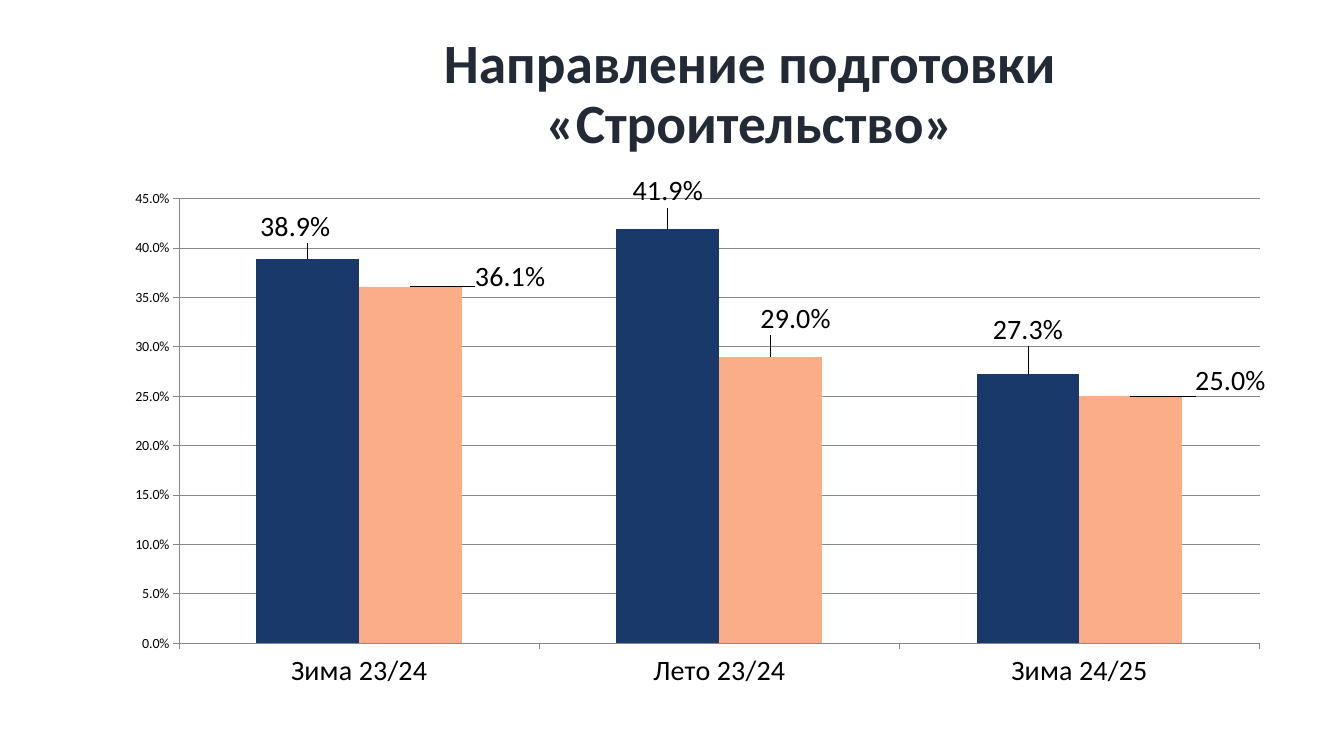
"""Build a slide with a clustered column chart for the «Строительство» programme."""
import pptx
import pptx.chart.data
import pptx.dml.color
import pptx.enum.chart
import pptx.enum.text
import pptx.oxml
import pptx.oxml.ns
import pptx.util

Cm = pptx.util.Cm
Pt = pptx.util.Pt
RGBColor = pptx.dml.color.RGBColor

TITLE_COLOR = RGBColor(0x22, 0x2A, 0x35)
TEXT_COLOR = RGBColor(0x00, 0x00, 0x00)
LINE_COLOR = RGBColor(0x88, 0x88, 0x88)
NAVY = RGBColor(0x1A, 0x39, 0x6B)
PEACH = RGBColor(0xFB, 0xAD, 0x87)
FONT_NAME = "Calibri"
PERCENT = "0.0%"

SERIES = [
    ("Series 1", NAVY, [0.389, 0.419, 0.273], [(-0.01, -0.02), (0, -0.03), (0, -0.04)]),
    ("Series 2", PEACH, [0.361, 0.29, 0.25], [(0.08, 0.02), (0.02, -0.03), (0.08, 0.01)]),
]


def format_font(font, size, color=TEXT_COLOR, bold=False):
    for name, value in {"name": FONT_NAME, "size": Pt(size), "bold": bold}.items():
        setattr(font, name, value)
    font.color.rgb = color


def manual_layout(settings):
    items = "".join(f'<c:{name} val="{value}"/>' for name, value in settings.items())
    return pptx.oxml.parse_xml(
        f'<c:layout {pptx.oxml.ns.nsdecls("c")}><c:manualLayout>{items}</c:manualLayout></c:layout>'
    )


presentation = pptx.Presentation()
presentation.slide_width = Cm(33.87)
presentation.slide_height = Cm(19.05)
slide = presentation.slides.add_slide(presentation.slide_layouts[6])

chart_data = pptx.chart.data.CategoryChartData(number_format=PERCENT)
chart_data.categories = ["Зима 23/24", "Лето 23/24", "Зима 24/25"]
for name, color, values, offsets in SERIES:
    chart_data.add_series(name, values)
chart = slide.shapes.add_chart(
    pptx.enum.chart.XL_CHART_TYPE.COLUMN_CLUSTERED,
    Cm(0.97), Cm(2.87), Cm(31.37), Cm(14.55), chart_data,
).chart
chart.has_legend = False
chart.has_title = False
format_font(chart.font, 10)

plot_area = chart.plots[0]
plot_area.gap_width = 150
plot_area.overlap = 0
plot_area.vary_by_categories = False
plot_element = chart._chartSpace.chart.plotArea
for layout in plot_element.xpath("c:layout"):
    plot_element.remove(layout)
plot_element.insert(0, manual_layout({
    "layoutTarget": "inner", "xMode": "edge", "yMode": "edge",
    "x": 0.113, "y": 0.147, "w": 0.868, "h": 0.77,
}))

value_axis = chart.value_axis
for name, value in {"minimum_scale": 0, "maximum_scale": 0.45, "major_unit": 0.05,
                    "has_major_gridlines": True}.items():
    setattr(value_axis, name, value)
value_axis.tick_labels.number_format = PERCENT
value_axis.tick_labels.number_format_is_linked = False
for axis, size in ((chart.category_axis, 20), (value_axis, 10)):
    axis.major_tick_mark = pptx.enum.chart.XL_TICK_MARK.OUTSIDE
    format_font(axis.tick_labels.font, size)
for line in (chart.category_axis.format.line, value_axis.format.line,
             value_axis.major_gridlines.format.line):
    line.color.rgb = LINE_COLOR
    line.width = Pt(0.75)

for series, (name, color, values, offsets) in zip(plot_area.series, SERIES):
    series.format.fill.solid()
    series.format.fill.fore_color.rgb = color
    series.invert_if_negative = False
    labels = series.data_labels
    for attribute, value in {"show_value": True, "number_format": PERCENT,
                             "number_format_is_linked": False,
                             "position": pptx.enum.chart.XL_LABEL_POSITION.OUTSIDE_END}.items():
        setattr(labels, attribute, value)
    format_font(labels.font, 20)
    for index, (x_offset, y_offset) in enumerate(offsets):
        label = series.points[index].data_label
        label.position = pptx.enum.chart.XL_LABEL_POSITION.OUTSIDE_END
        format_font(label.font, 20)
        label_element = series._element.xpath("c:dLbls/c:dLbl")[index]
        label_element.insert(1, manual_layout({"x": x_offset, "y": y_offset}))

title = slide.shapes.add_textbox(Cm(6.25), Cm(1.02), Cm(25.3), Cm(2.77))
title.text_frame.word_wrap = True
title.text_frame.vertical_anchor = pptx.enum.text.MSO_ANCHOR.MIDDLE
paragraph = title.text_frame.paragraphs[0]
paragraph.text = "Направление подготовки «Строительство»"
paragraph.alignment = pptx.enum.text.PP_ALIGN.CENTER
paragraph.line_spacing = 0.9
format_font(paragraph.font, 39.6, TITLE_COLOR, True)

presentation.save("out.pptx")
